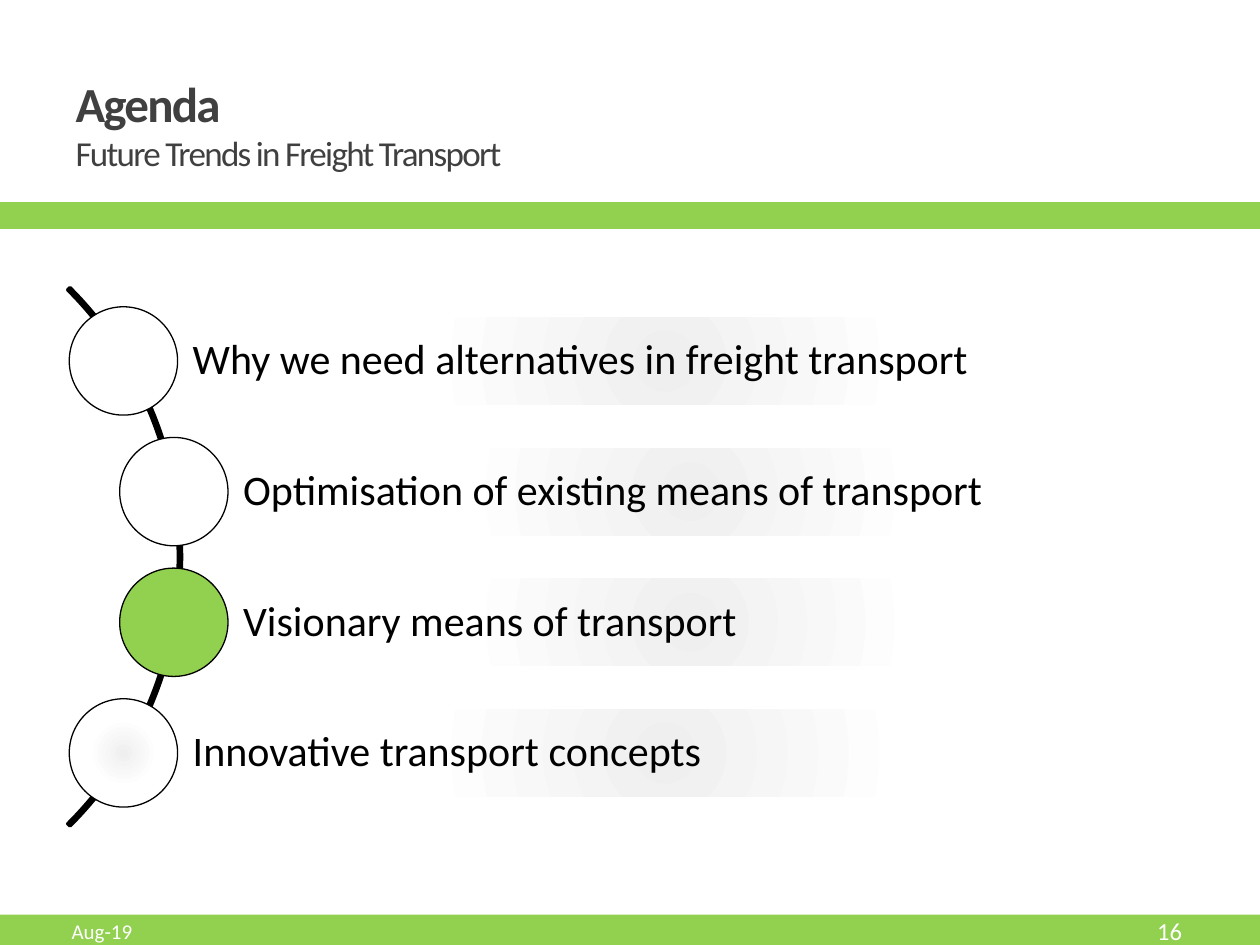
from lxml import etree
from pptx import Presentation
from pptx.dml.color import RGBColor
from pptx.enum.shapes import MSO_SHAPE
from pptx.enum.text import MSO_ANCHOR, MSO_AUTO_SIZE, PP_ALIGN
from pptx.oxml import parse_xml
from pptx.oxml.ns import qn
from pptx.util import Inches, Pt

RECTANGLE, OVAL, ARC = MSO_SHAPE.RECTANGLE, MSO_SHAPE.OVAL, MSO_SHAPE.BLOCK_ARC
MIDDLE, NO_AUTOFIT = MSO_ANCHOR.MIDDLE, MSO_AUTO_SIZE.NONE
LEFT, RIGHT = PP_ALIGN.LEFT, PP_ALIGN.RIGHT
COLORS = {"green": "92D050", "white": "FFFFFF", "black": "000000",
          "title": "404040", "glow": "EFEFEF"}
FONT = "Calibri"
GLOW_STOPS = [(0, "glow"), (45, "white"), (100, "white")]


def add_figure(kind, left, top, width, height, fill=None, line=None, line_width=0.75):
    figure = slide.shapes.add_shape(kind, Inches(left), Inches(top), Inches(width), Inches(height))
    figure.shadow.inherit = False
    figure.fill.background()
    if fill == "glow":
        gradient = parse_xml('<a:gradFill xmlns:a="http://schemas.openxmlformats.org/drawingml/2006/main" '
                             'rotWithShape="1"><a:gsLst/><a:path path="circle">'
                             '<a:fillToRect l="100000" t="100000" r="100000" b="100000"/>'
                             '</a:path></a:gradFill>')
        for position, color in GLOW_STOPS:
            stop = etree.SubElement(gradient[0], qn("a:gs"), pos=str(position * 1000))
            etree.SubElement(stop, qn("a:srgbClr"), val=COLORS[color])
        properties = figure._element.spPr
        properties.replace(properties.find(qn("a:noFill")), gradient)
    elif fill:
        figure.fill.solid()
        figure.fill.fore_color.rgb = RGBColor.from_string(COLORS[fill])
    if line:
        figure.line.color.rgb = RGBColor.from_string(COLORS[line])
        figure.line.width = Pt(line_width)
    else:
        figure.line.fill.background()
    return figure


def add_run(paragraph, text, size, color, bold=False):
    run = paragraph.add_run()
    run.text = text
    run.font.name = FONT
    run.font.size = Pt(size)
    run.font.bold = bold
    run.font.color.rgb = RGBColor.from_string(COLORS[color])
    return run


prs = Presentation()
prs.slide_width, prs.slide_height = Inches(10), Inches(7.5)
slide = prs.slides.add_slide(prs.slide_layouts[5])

add_figure(RECTANGLE, -0.04, 7.26, 10.16, 0.5, "green")
add_figure(RECTANGLE, 0, 1.62, 10.12, 0.18, "green", "green", 2.08)

title = slide.shapes.title
title.left, title.top, title.width, title.height = Inches(0.5), Inches(0.44), Inches(5.21), Inches(1.08)
title.text_frame.auto_size = NO_AUTOFIT
title.text_frame.vertical_anchor = MIDDLE
heading = title.text_frame.paragraphs[0]
heading.alignment = LEFT
heading_run = add_run(heading, "Agenda", 28, "title", True)
heading.add_line_break()
subtitle_run = add_run(heading, "Future Trends in Freight Transport", 20, "title")
for run in (heading_run, subtitle_run):
    run._r.get_or_add_rPr().set("spc", "-100")

arc = add_figure(ARC, -4.6, 1.4, 6.04, 6.04, line="black", line_width=2.08)
for index, value in enumerate((189, 27, 0.004)):
    arc.adjustments[index] = value

agenda = [
    ("Why we need alternatives in freight transport", 0.98, "white"),
    ("Optimisation of existing means of transport", 1.38, "white"),
    ("Visionary means of transport", 1.38, "green"),
    ("Innovative transport concepts", 0.98, "glow"),
]
ROW_TOP, ROW_PITCH, ROW_HEIGHT, ROW_RIGHT = 2.52, 1.037, 0.69, 9.58
CIRCLE = 0.86
for index, (topic, left, marker_fill) in enumerate(agenda):
    top = ROW_TOP + index * ROW_PITCH
    bar = add_figure(RECTANGLE, left, top, ROW_RIGHT - left, ROW_HEIGHT, "glow")
    frame = bar.text_frame
    frame.word_wrap = True
    frame.vertical_anchor = MIDDLE
    frame.margin_left = Inches(0.55)
    frame.margin_top = frame.margin_right = frame.margin_bottom = Inches(0.07)
    entry = frame.paragraphs[0]
    entry.alignment = LEFT
    entry.line_spacing = 0.9
    add_run(entry, topic, 24, "black")
    add_figure(OVAL, left - CIRCLE / 2, top + (ROW_HEIGHT - CIRCLE) / 2, CIRCLE, CIRCLE,
               marker_fill, "black")

footers = [("Aug-19", 0.47, 3.17, 12, LEFT), ("16", 8.31, 1.17, 14, RIGHT)]
for text, left, width, size, alignment in footers:
    footer = slide.shapes.add_textbox(Inches(left), Inches(7.21), Inches(width), Inches(0.36))
    footer.text_frame.word_wrap = True
    footer.text_frame.vertical_anchor = MIDDLE
    footer_line = footer.text_frame.paragraphs[0]
    footer_line.alignment = alignment
    add_run(footer_line, text, size, "white")

prs.save("out.pptx")
